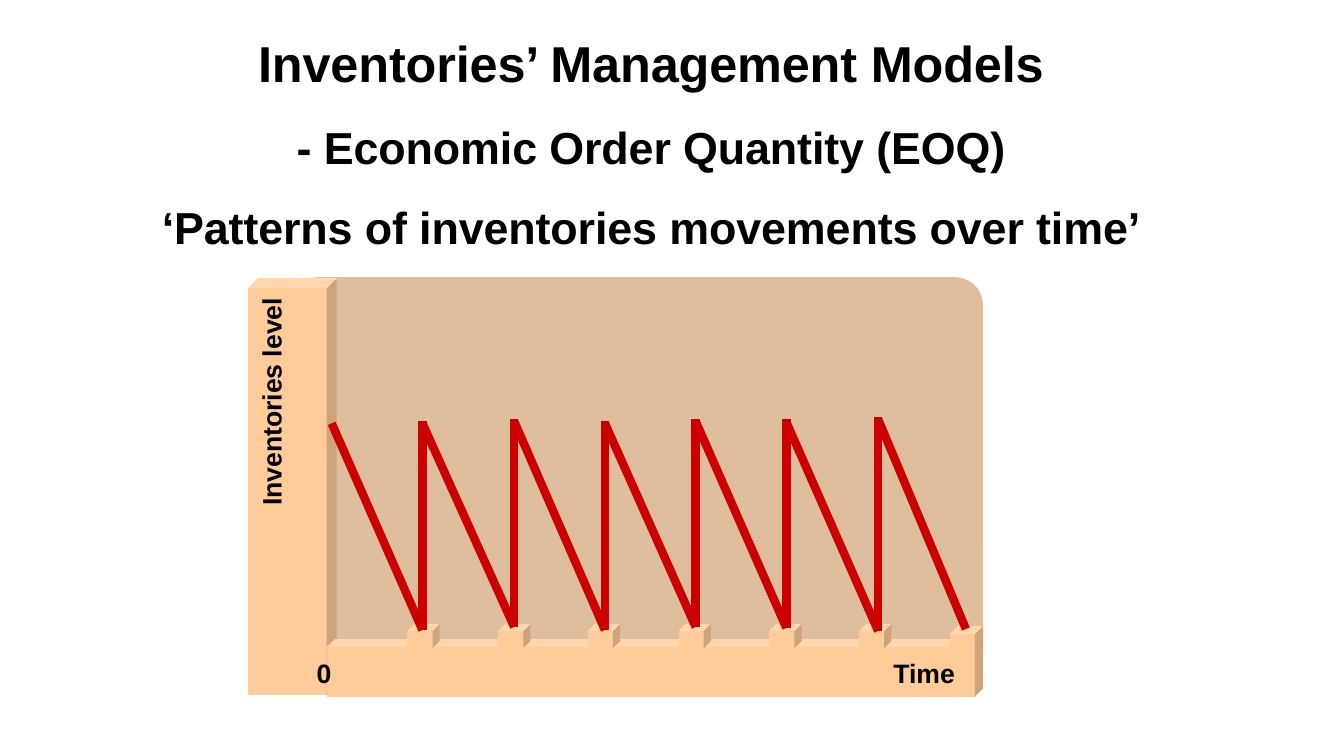
from lxml import etree
from pptx import Presentation
from pptx.dml.color import RGBColor
from pptx.enum.shapes import MSO_CONNECTOR, MSO_SHAPE
from pptx.enum.text import PP_ALIGN
from pptx.oxml.ns import qn
from pptx.util import Pt

LEFT, CENTER, RIGHT = PP_ALIGN.LEFT, PP_ALIGN.CENTER, PP_ALIGN.RIGHT
STRAIGHT = MSO_CONNECTOR.STRAIGHT
ROUNDED = MSO_SHAPE.ROUNDED_RECTANGLE
PX = 9144  # 100 px to the inch

# Content: (text, size in points, line height in points, letter spacing)
HEADING = [
    ("Inventories’ Management Models", 36, 41, -10),
    ("- Economic Order Quantity (EOQ)", 32, 58, -10),
    ("‘Patterns of inventories movements over time’", 32, 57, -10),
]
LEVEL_LABEL = [("Inventories level", 19, 22, 0)]
TIME_LABEL = [("Time", 19, 22, 0)]
ZERO_LABEL = [("0", 19, 22, 0)]

# Stock cycles: (start x, peak of the refill, start of the drop, low point)
CYCLES = [
    (329, None, 420, 625),
    (419, 418, 420, 622),
    (510, 416, 418, 625),
    (600, 418, 420, 622),
    (690, 416, 418, 623),
    (780, 416, 419, 626),
    (871, 414, 416, 624),
]
END_X = 958

COLORS = {
    "text": "000000",
    "backdrop": "DFBE9D",
    "front": "FFCC99",
    "side": "CDA47B",
    "top": "FFD6AD",
    "stock": "CC0000",
}

# Axis blocks: (left, top, width, height, depth)
LEVEL_AXIS = (246, 286, 78, 404, 10)
TIME_AXIS = (324, 642, 643, 49, 8)
TICK_COUNT, TICK_LEFT, TICK_STEP = 6, 404, 89.7
LAST_TICK = (942, 629, 25, 15, 8)
TICKS = [(round(TICK_LEFT + i * TICK_STEP), 626, 25, 17, 7)
         for i in range(TICK_COUNT)] + [LAST_TICK]

deck = Presentation()
deck.slide_width, deck.slide_height = 1333 * PX, 750 * PX
page = deck.slides.add_slide(deck.slide_layouts[6])


def color(name):
    return RGBColor.from_string(COLORS[name])


def paint(shape, name):
    shape.shadow.inherit = False
    shape.fill.solid()
    shape.fill.fore_color.rgb = color(name)
    shape.line.fill.background()


def add_face(points, name):
    builder = page.shapes.build_freeform(*points[0], scale=PX)
    builder.add_line_segments(points[1:], close=True)
    paint(builder.convert_to_shape(), name)


def add_block(left, top, width, height, depth):
    right, bottom = left + width, top + height
    back_right, back_top = right + depth, top - depth
    add_face([(left, top), (right, top), (right, bottom), (left, bottom)], "front")
    add_face([(back_right, back_top), (right, top), (right, bottom),
              (back_right, bottom - depth)], "side")
    add_face([(back_right, back_top), (left + depth, back_top),
              (left, top), (right, top)], "top")


def add_stock_line(*ends):
    line = page.shapes.add_connector(STRAIGHT, *(end * PX for end in ends))
    line.line.color.rgb = color("stock")
    line.line.width = Pt(6)
    etree.SubElement(line._element.spPr, qn("a:effectLst"))


def add_text(lines, left, top, width, height, align, direction="horz"):
    box = page.shapes.add_textbox(left * PX, top * PX, width * PX, height * PX)
    frame = box.text_frame
    frame_format = {"word_wrap": True, "margin_left": 0, "margin_top": 0,
                    "margin_right": 0, "margin_bottom": 0}
    for key, value in frame_format.items():
        setattr(frame, key, value)
    frame._txBody.bodyPr.set("vert", direction)
    for i, (text, size, line_height, spacing) in enumerate(lines):
        para = frame.add_paragraph() if i else frame.paragraphs[0]
        para.alignment = align
        para.line_spacing = Pt(line_height)
        span = para.add_run()
        span.text = text
        for key, value in {"name": "Arial", "size": Pt(size), "bold": True}.items():
            setattr(span.font, key, value)
        span.font.color.rgb = color("text")
        span._r.get_or_add_rPr().set("spc", str(spacing))


# Chart backdrop
backdrop = page.shapes.add_shape(ROUNDED, 288 * PX, 275 * PX, 687 * PX, 400 * PX)
backdrop.adjustments[0] = 0.07
paint(backdrop, "backdrop")

# Axes and ticks
for block in [LEVEL_AXIS, TIME_AXIS, *TICKS]:
    add_block(*block)

# Sawtooth of stock: refill upwards, then a steady drop
next_starts = [cycle[0] for cycle in CYCLES[1:]] + [END_X]
previous_low = None
for (start, peak, drop_top, low), next_start in zip(CYCLES, next_starts):
    if peak is not None:
        add_stock_line(start, previous_low, start, peak)
    add_stock_line(start, drop_top, next_start, low)
    previous_low = low

# Heading and axis labels
add_text(HEADING, 157, 35, 977, 219, CENTER)
add_text(LEVEL_LABEL, 254, 292, 32, 210, LEFT, "vert270")
add_text(TIME_LABEL, 324, 653, 623, 32, RIGHT)
add_text(ZERO_LABEL, 314, 653, 16, 32, LEFT)

deck.save("out.pptx")
